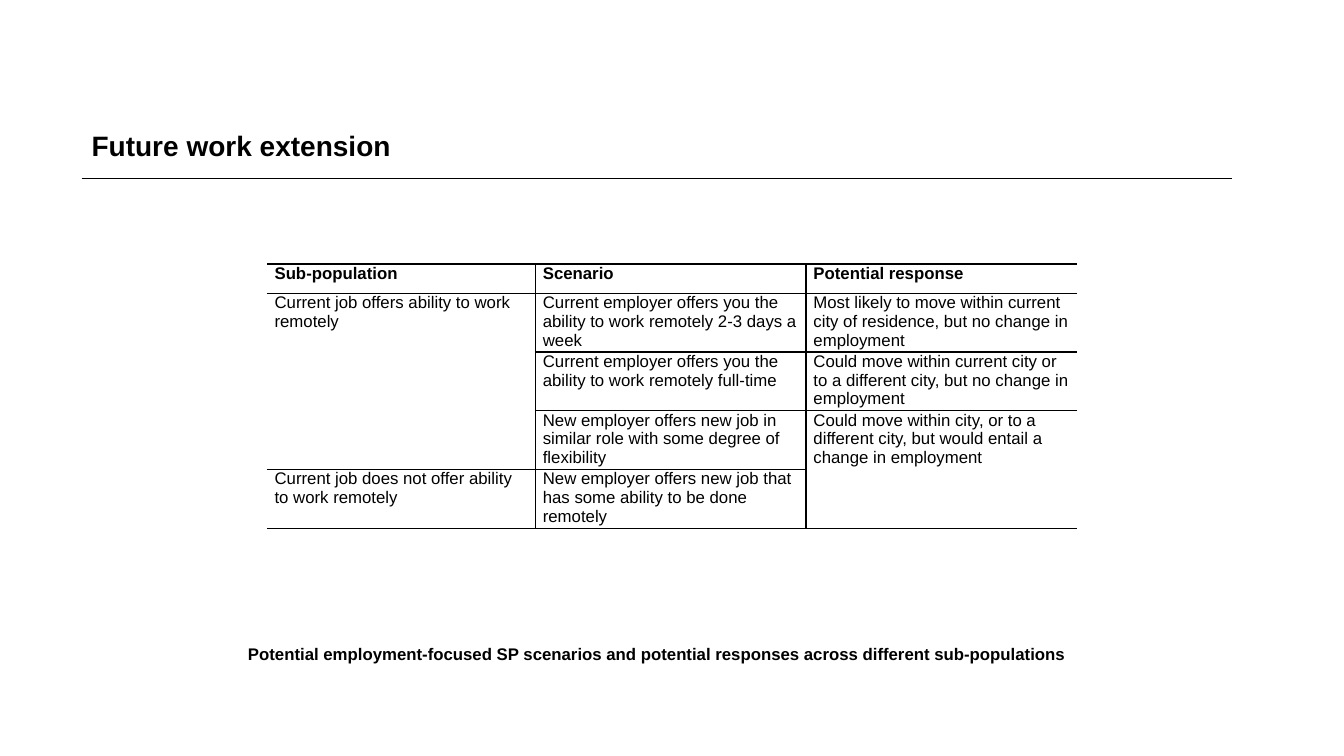
from lxml import etree
from pptx import Presentation
from pptx import util as u
from pptx.dml.color import RGBColor
from pptx.enum import shapes, text
from pptx.oxml import ns

BLACK = RGBColor(0, 0, 0)
LINE_WIDTH = u.Pt(1)


def write_text(frame, content, size=12, bold=False, spacing=0):
    frame.word_wrap = True
    paragraph = frame.paragraphs[0]
    paragraph.alignment = text.PP_ALIGN.LEFT
    paragraph.space_before = paragraph.space_after = u.Pt(spacing)
    run = paragraph.add_run()
    run.text = content
    run.font.name = "Arial"
    run.font.size = u.Pt(size)
    run.font.bold = bold
    run.font.color.rgb = BLACK


def set_borders(cell, visible_sides):
    properties = cell._tc.get_or_add_tcPr()
    for position, side in enumerate("LRTB"):
        border = etree.Element(ns.qn(f"a:ln{side}"), w=str(LINE_WIDTH))
        if side in visible_sides:
            fill = etree.SubElement(border, ns.qn("a:solidFill"))
            etree.SubElement(fill, ns.qn("a:srgbClr"), val=str(BLACK))
        else:
            etree.SubElement(border, ns.qn("a:noFill"))
        properties.insert(position, border)


presentation = Presentation()
presentation.slide_width = u.Cm(33.87)
presentation.slide_height = u.Cm(19.05)
slide = presentation.slides.add_slide(presentation.slide_layouts[6])

# Table of scenarios; None marks a cell covered by the one above
ROWS = [
    ("Sub-population", "Scenario", "Potential response"),
    ("Current job offers ability to work remotely",
     "Current employer offers you the ability to work remotely 2-3 days a week",
     "Most likely to move within current city of residence, but no change in employment"),
    (None,
     "Current employer offers you the ability to work remotely full-time",
     "Could move within current city or to a different city, but no change in employment"),
    (None,
     "New employer offers new job in similar role with some degree of flexibility",
     "Could move within city, or to a different city, but would entail a change in employment"),
    ("Current job does not offer ability to work remotely",
     "New employer offers new job that has some ability to be done remotely",
     None),
]
COLUMN_WIDTHS = [6.76, 6.82, 6.82]
ROW_HEIGHTS = [0.74] + [1.48] * 4

table = slide.shapes.add_table(
    len(ROWS), len(COLUMN_WIDTHS), u.Cm(6.73), u.Cm(6.65),
    u.Cm(sum(COLUMN_WIDTHS)), u.Cm(sum(ROW_HEIGHTS))).table
table.first_row = table.horz_banding = False
for column, width in zip(table.columns, COLUMN_WIDTHS):
    column.width = u.Cm(width)
for row, height in zip(table.rows, ROW_HEIGHTS):
    row.height = u.Cm(height)

table.cell(1, 0).merge(table.cell(3, 0))
table.cell(3, 2).merge(table.cell(4, 2))

# Cells, with no border on the outer left and right
INNER_SIDES = ["RTB", "LRTB", "LTB"]
for row_index, row_texts in enumerate(ROWS):
    for column_index, content in enumerate(row_texts):
        cell = table.cell(row_index, column_index)
        cell.margin_left = cell.margin_right = u.Cm(0.19)
        cell.margin_top = cell.margin_bottom = 0
        cell.fill.background()
        set_borders(cell, INNER_SIDES[column_index])
        if content:
            write_text(cell.text_frame, content, bold=row_index == 0, spacing=2)

# Caption
caption = slide.shapes.add_textbox(u.Cm(6), u.Cm(16.1), u.Cm(22.25), u.Cm(0.77))
write_text(caption.text_frame,
           "Potential employment-focused SP scenarios and potential responses "
           "across different sub-populations", bold=True)

# Title and its rule
title = slide.shapes.add_textbox(u.Cm(2.06), u.Cm(3.12), u.Cm(16.97), u.Cm(0.99))
title.text_frame.margin_bottom = 0
write_text(title.text_frame, "Future work extension", size=20, bold=True)

title_rule = slide.shapes.add_connector(
    shapes.MSO_CONNECTOR.STRAIGHT, u.Cm(2.06), u.Cm(4.5), u.Cm(31.04), u.Cm(4.5))
title_rule.line.color.rgb = BLACK
title_rule.line.width = LINE_WIDTH
etree.SubElement(title_rule._element.spPr, ns.qn("a:effectLst"))

presentation.save("out.pptx")
